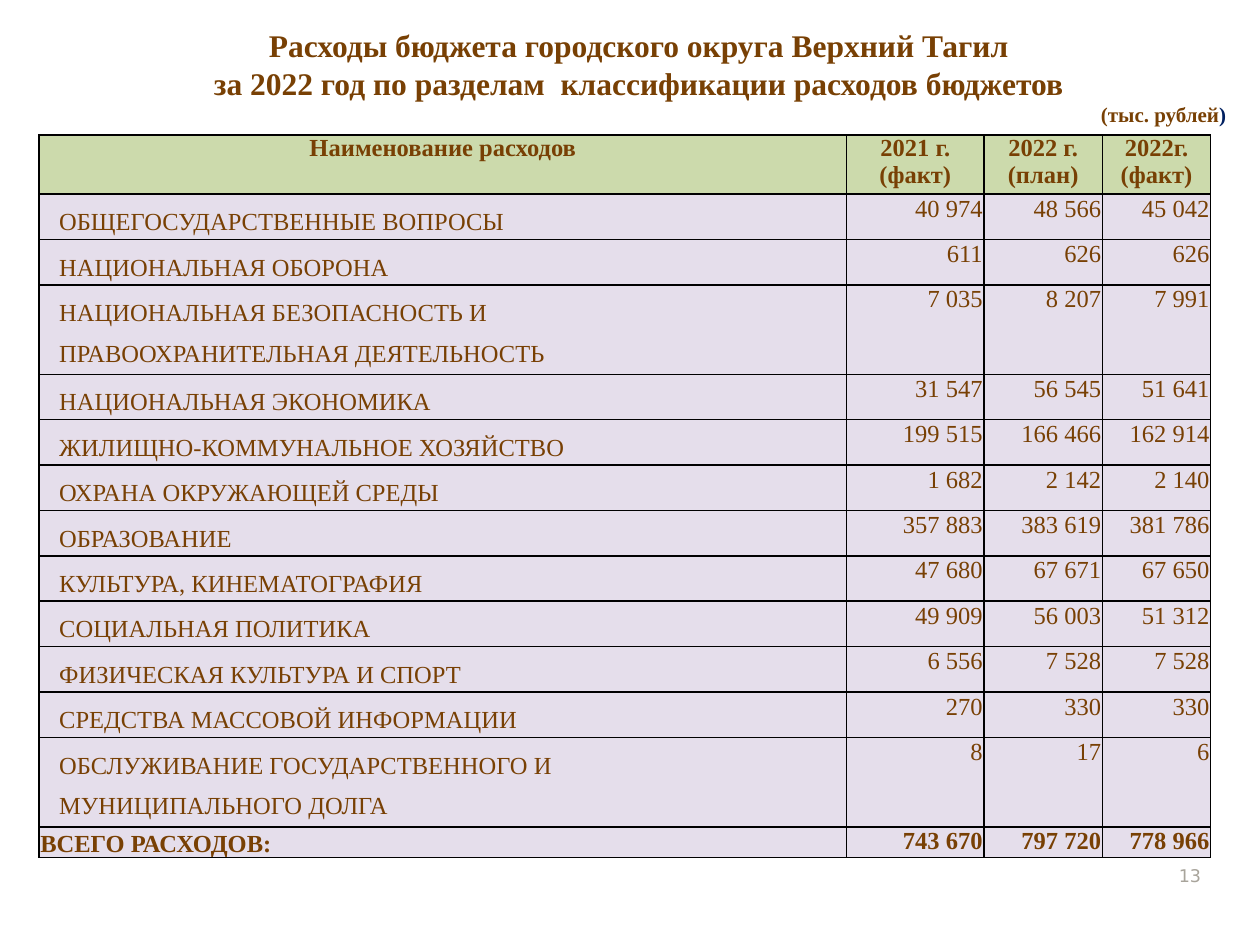
from dataclasses import dataclass

from lxml import etree
from pptx import Presentation
from pptx import util as u
from pptx.dml.color import RGBColor
from pptx.enum import text
from pptx.oxml import parse_xml
from pptx.oxml.ns import nsdecls, qn

LEFT, MID, RIGHT = text.PP_ALIGN.LEFT, text.PP_ALIGN.CENTER, text.PP_ALIGN.RIGHT
TOP, BOTTOM = text.MSO_ANCHOR.TOP, text.MSO_ANCHOR.BOTTOM


@dataclass(frozen=True)
class Theme:
    serif: str = "Times New Roman"
    sans: str = "DejaVu Sans"
    brown: str = "784004"
    navy: str = "002060"
    gray: str = "A8A49B"
    green: str = "CCDAAC"
    lilac: str = "DFD7E7"
    black: str = "000000"
    title: int = 18
    body: int = 14
    unit: int = 12
    page: int = 10


HEAD = ["Наименование расходов", "2021 г.\n(факт)", "2022 г.\n(план)", "2022г.\n(факт)"]
ROWS = [
    ("ОБЩЕГОСУДАРСТВЕННЫЕ ВОПРОСЫ", "40 974", "48 566", "45 042"),
    ("НАЦИОНАЛЬНАЯ ОБОРОНА", "611", "626", "626"),
    ("НАЦИОНАЛЬНАЯ БЕЗОПАСНОСТЬ И\nПРАВООХРАНИТЕЛЬНАЯ ДЕЯТЕЛЬНОСТЬ", "7 035", "8 207", "7 991"),
    ("НАЦИОНАЛЬНАЯ ЭКОНОМИКА", "31 547", "56 545", "51 641"),
    ("ЖИЛИЩНО-КОММУНАЛЬНОЕ ХОЗЯЙСТВО", "199 515", "166 466", "162 914"),
    ("ОХРАНА ОКРУЖАЮЩЕЙ СРЕДЫ", "1 682", "2 142", "2 140"),
    ("ОБРАЗОВАНИЕ", "357 883", "383 619", "381 786"),
    ("КУЛЬТУРА, КИНЕМАТОГРАФИЯ", "47 680", "67 671", "67 650"),
    ("СОЦИАЛЬНАЯ ПОЛИТИКА", "49 909", "56 003", "51 312"),
    ("ФИЗИЧЕСКАЯ КУЛЬТУРА И СПОРТ", "6 556", "7 528", "7 528"),
    ("СРЕДСТВА МАССОВОЙ ИНФОРМАЦИИ", "270", "330", "330"),
    ("ОБСЛУЖИВАНИЕ ГОСУДАРСТВЕННОГО И\nМУНИЦИПАЛЬНОГО ДОЛГА", "8", "17", "6"),
]
TOTAL = ("ВСЕГО РАСХОДОВ:", "743 670", "797 720", "778 966")
COLS = [6.41, 1.09, 0.94, 0.86]


class Deck:
    def __init__(self, theme):
        self.theme = theme
        self.prs = Presentation()
        self.prs.slide_width, self.prs.slide_height = u.Inches(10), u.Inches(7.5)
        self.slide = self.prs.slides.add_slide(self.prs.slide_layouts[6])

    def run(self, para, words, size, color=None, bold=False, face=None):
        run = para.add_run()
        run.text = words
        font = run.font
        font.name, font.size, font.bold = face or self.theme.serif, u.Pt(size), bold
        font.color.rgb = RGBColor.from_string(color or self.theme.brown)

    def lines(self, frame, paras):
        """Fill a frame from (alignment, spacing, runs) entries."""
        for i, (align, gap, runs) in enumerate(paras):
            para = frame.paragraphs[0] if i == 0 else frame.add_paragraph()
            para.alignment = align
            if gap:
                para.line_spacing = gap
            for args in runs:
                self.run(para, *args)

    def box(self, place, paras, anchor=TOP, grow=False):
        frame = self.slide.shapes.add_textbox(*map(u.Inches, place)).text_frame
        frame.word_wrap = True
        frame.vertical_anchor = anchor
        if grow:
            frame.auto_size = text.MSO_AUTO_SIZE.SHAPE_TO_FIT_TEXT
        self.lines(frame, paras)

    def grid(self, place, cols, heights):
        """Add a plain table with the given column widths and row heights."""
        frame = self.slide.shapes.add_table(
            len(heights), len(cols), *map(u.Inches, place))
        table = frame.table
        table.first_row = table.horz_banding = False
        for col, width in zip(table.columns, cols):
            col.width = u.Inches(width)
        for row, height in zip(table.rows, heights):
            row.height = u.Inches(height)
        return table

    def cell(self, cell, words, fill, pads, align, bold=False, gap=None,
             anchor=TOP, alpha=None):
        cell.margin_left, cell.margin_top, cell.margin_right, cell.margin_bottom = map(
            u.Inches, pads)
        cell.vertical_anchor = anchor
        self.lines(cell.text_frame, [
            (align, gap, [(line, self.theme.body, None, bold)])
            for line in words.split("\n")])
        cell.fill.solid()
        cell.fill.fore_color.rgb = RGBColor.from_string(fill)
        props = cell._tc.get_or_add_tcPr()
        if alpha:
            tint = props.find(".//" + qn("a:srgbClr"))
            etree.SubElement(tint, qn("a:alpha")).set("val", str(alpha * 1000))
        for i, side in enumerate("LRTB"):
            props.insert(i, parse_xml(
                f'<a:ln{side} {nsdecls("a")} w="12700"><a:solidFill>'
                f'<a:srgbClr val="{self.theme.black}"/></a:solidFill></a:ln{side}>'))


def main():
    look = Theme()
    deck = Deck(look)
    deck.box((9.13, 6.68, 0.5, 0.4),
             [(RIGHT, None, [("13", look.page, look.gray, False, look.sans)])], BOTTOM)
    deck.box((0.31, 0.16, 9.52, 0.91), [
        (MID, None, [("Расходы бюджета городского округа Верхний Тагил",
                      look.title, look.brown, True)]),
        (MID, None, [("за 2022 год по разделам  классификации расходов бюджетов",
                      look.title, look.brown, True)]),
        (RIGHT, None, [("(тыс. рублей", look.unit, look.brown, True),
                       (")", look.unit, look.navy, True)]),
    ], grow=True)

    heights = [0.47] + [0.71 if "\n" in row[0] else 0.36 for row in ROWS] + [0.24]
    table = deck.grid((0.31, 1.07, sum(COLS), sum(heights)), COLS, heights)
    for c, words in enumerate(HEAD):
        deck.cell(table.cell(0, c), words, look.green, (0.05, 0, 0.05, 0), MID, True)
    tight, inset = (0.01, 0.01, 0.01, 0), (0.16, 0.01, 0.01, 0)
    for r, row in enumerate(ROWS + [TOTAL], 1):
        last = row is TOTAL
        for c, words in enumerate(row):
            name = c == 0
            deck.cell(table.cell(r, c), words, look.lilac,
                      inset if name and not last else tight,
                      LEFT if name else RIGHT, last,
                      1.5 if name and not last else None,
                      BOTTOM if name and last else TOP, 81)
    deck.prs.save("out.pptx")


if __name__ == "__main__":
    main()
